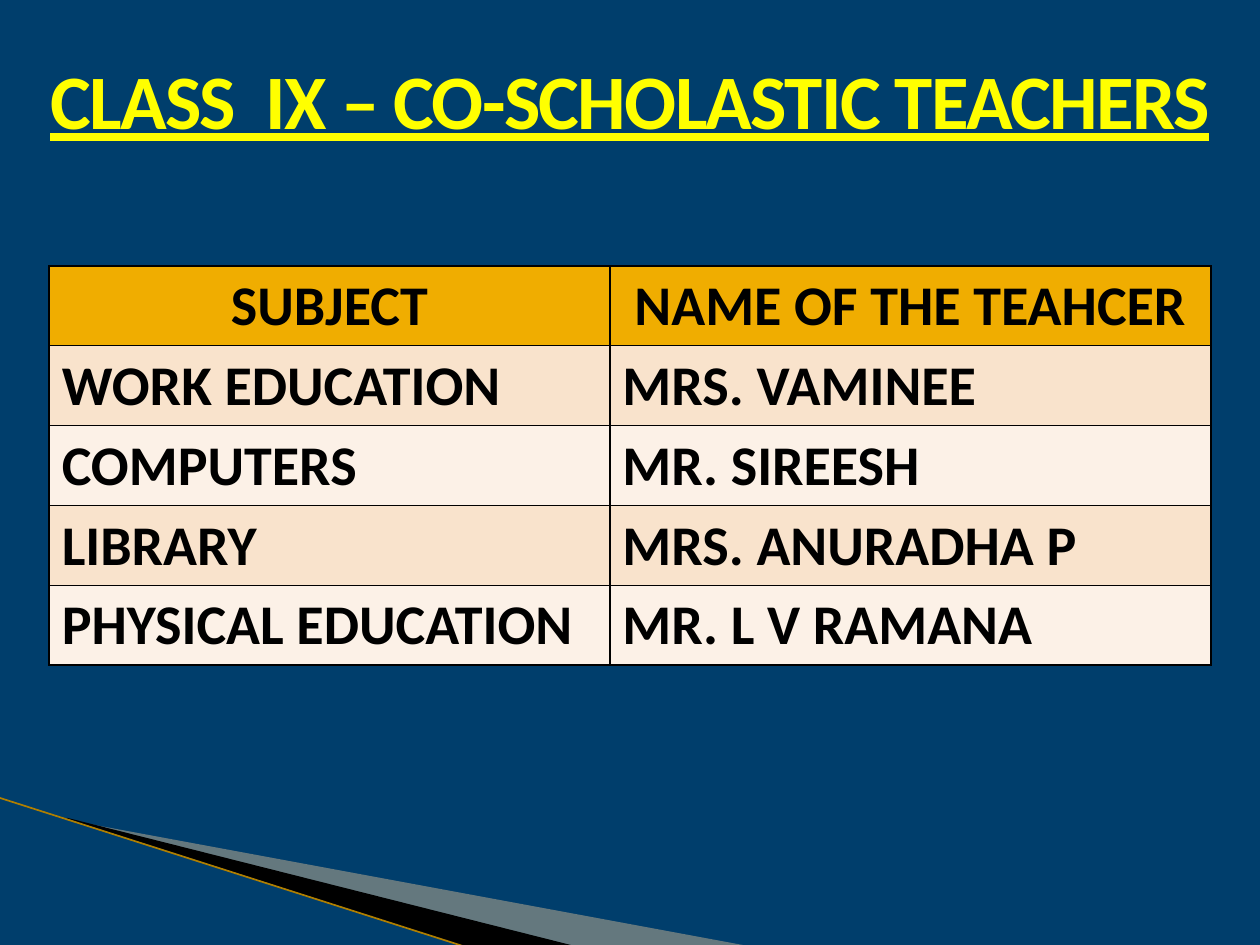
from dataclasses import dataclass

from lxml import etree
from pptx import Presentation
from pptx.dml.color import RGBColor
from pptx.enum.shapes import MSO_CONNECTOR
from pptx.enum.text import PP_ALIGN as Align
from pptx.oxml.ns import qn
from pptx.util import Inches, Pt


@dataclass(frozen=True)
class Theme:
    font: str = "Calibri"
    background: str = "003E6C"
    title: str = "FFFF00"
    ink: str = "000000"
    header: str = "F0AD00"
    bands: tuple = ("F9E3CC", "FCF1E7")
    wedge: str = "FCCF9B"
    edge: str = "B07F00"
    title_size: int = 44
    table_size: int = 32


def rgb(color):
    return RGBColor.from_string(color)


def write(tf, text, *, size, color, font, align=Align.LEFT, underline=False,
          line_spacing=None, tracking=None):
    p = tf.paragraphs[0]
    p.alignment = align
    if line_spacing:
        p.line_spacing = line_spacing
    r = p.add_run()
    r.text = text
    r.font.name, r.font.size, r.font.bold = font, Pt(size), True
    r.font.underline = underline
    r.font.color.rgb = rgb(color)
    if tracking:
        r.font._element.set("spc", str(tracking * 100))


class SlideBuilder:
    def __init__(self, slide, theme):
        self.s, self.theme = slide, theme
        fill = slide.background.fill
        fill.solid()
        fill.fore_color.rgb = rgb(theme.background)

    def title(self, text, left, top, width, height):
        sp = self.s.shapes.add_textbox(*map(Inches, (left, top, width, height)))
        sp.text_frame.word_wrap = True
        write(sp.text_frame, text, size=self.theme.title_size, color=self.theme.title,
              font=self.theme.font, align=Align.CENTER, underline=True,
              line_spacing=1.5, tracking=-1)

    def wedge(self, points, frame, color, opacity=100):
        (x, y), *rest = [(Inches(x), Inches(y)) for x, y in points]
        builder = self.s.shapes.build_freeform(x, y)
        builder.add_line_segments(rest, close=True)
        sp = builder.convert_to_shape()
        self.reframe(sp, *map(Inches, frame))
        sp.shadow.inherit = False
        sp.fill.solid()
        sp.fill.fore_color.rgb = rgb(color)
        sp.line.fill.background()
        if opacity < 100:
            clr = sp._element.spPr.find(qn("a:solidFill"))[0]
            etree.SubElement(clr, qn("a:alpha"), val=str(opacity * 1000))

    @staticmethod
    def reframe(sp, left, top, width, height):
        """Give a freeform a new frame while its outline stays in place."""
        dx, dy = sp.left - left, sp.top - top
        for path in sp._element.iter(qn("a:path")):
            path.set("w", str(width))
            path.set("h", str(height))
            for pt in path.iter(qn("a:pt")):
                pt.set("x", str(int(pt.get("x")) + dx))
                pt.set("y", str(int(pt.get("y")) + dy))
        sp.left, sp.top, sp.width, sp.height = left, top, width, height

    def line(self, start, end, color, width):
        sp = self.s.shapes.add_connector(MSO_CONNECTOR.STRAIGHT, *map(Inches, start + end))
        sp.line.color.rgb = rgb(color)
        sp.line.width = Pt(width)
        etree.SubElement(sp._element.spPr, qn("a:effectLst"))

    def table(self, rows, left, top, col_widths, row_height):
        """Rows are minimum heights and grow to fit their text."""
        t = self.theme
        frame = self.s.shapes.add_table(len(rows), len(col_widths), Inches(left), Inches(top),
                                        Inches(sum(col_widths)), Inches(row_height * len(rows)))
        table = frame.table
        for col, width in zip(table.columns, col_widths):
            col.width = Inches(width)
        for i, row in enumerate(rows):
            fill = t.bands[(i - 1) % 2] if i else t.header
            for j, text in enumerate(row):
                cell = table.cell(i, j)
                write(cell.text_frame, text, size=t.table_size, color=t.ink, font=t.font,
                      align=Align.LEFT if i else Align.CENTER)
                self.borders(cell, t.ink, 1)
                cell.fill.solid()
                cell.fill.fore_color.rgb = rgb(fill)

    @staticmethod
    def borders(cell, color, width):
        """Outline all four sides; call before filling, as borders precede the fill."""
        tc_pr = cell._tc.get_or_add_tcPr()
        for side in ("lnL", "lnR", "lnT", "lnB"):
            ln = etree.SubElement(tc_pr, qn(f"a:{side}"), w=str(Pt(width)))
            solid = etree.SubElement(ln, qn("a:solidFill"))
            etree.SubElement(solid, qn("a:srgbClr"), val=color)


TEACHERS = [
    ("SUBJECT", "NAME OF THE TEAHCER"),
    ("WORK EDUCATION", "MRS. VAMINEE"),
    ("COMPUTERS", "MR. SIREESH"),
    ("LIBRARY", "MRS. ANURADHA P"),
    ("PHYSICAL EDUCATION", "MR. L V RAMANA"),
]


def main():
    prs = Presentation()
    prs.slide_width, prs.slide_height = Inches(10), Inches(7.5)
    theme = Theme()
    page = SlideBuilder(prs.slides.add_slide(prs.slide_layouts[6]), theme)

    page.wedge([(0.55, 6.51), (5.95, 7.51), (4.56, 7.51), (0.55, 6.5)],
               (0.78, 5.47, 4.16, 1.58), theme.wedge, opacity=40)
    page.wedge([(0.53, 6.49), (4.57, 7.51), (3.72, 7.52), (0.54, 6.5)],
               (-0.06, 6.33, 4.16, 0.92), theme.ink)
    page.line((-0.01, 6.33), (3.71, 7.52), theme.edge, 0.95)
    page.title("CLASS  IX – CO-SCHOLASTIC TEACHERS", 0, 0, 10, 1.21)
    page.table(TEACHERS, 0.39, 2.11, (4.45, 4.77), 0.41)
    prs.save("out.pptx")


if __name__ == "__main__":
    main()
